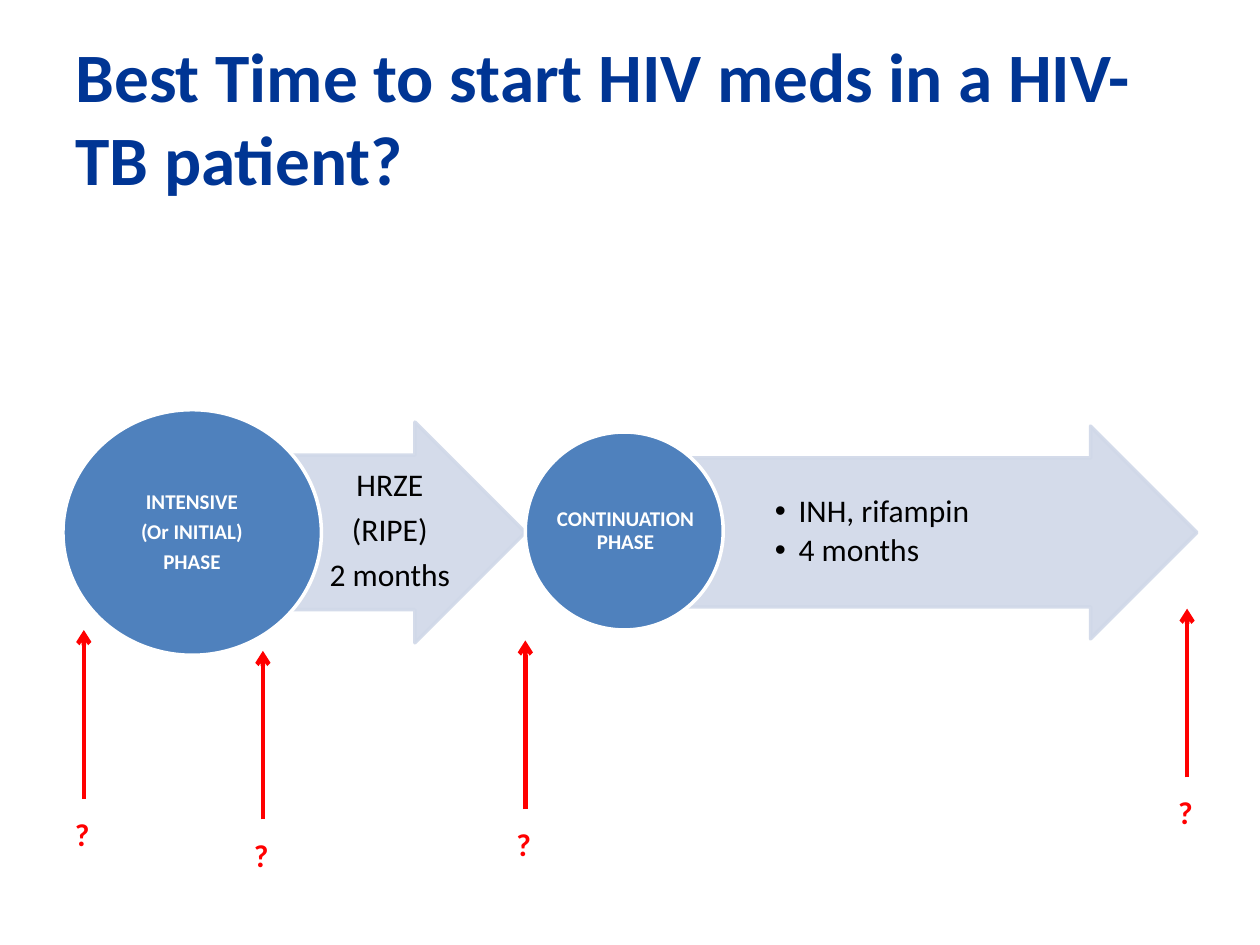
from lxml.etree import SubElement
from pptx import Presentation
from pptx.dml.color import RGBColor
from pptx.enum.shapes import MSO_CONNECTOR, MSO_SHAPE
from pptx.enum.text import MSO_ANCHOR, MSO_AUTO_SIZE, PP_ALIGN
from pptx.oxml.ns import qn
from pptx.util import Cm, Pt

NAVY = RGBColor(0x00, 0x35, 0x94)
BLUE = RGBColor(0x4F, 0x81, 0xBD)
PALE = RGBColor(0xD0, 0xD8, 0xE8)
RED = RGBColor(0xFF, 0x00, 0x00)
WHITE = RGBColor(0xFF, 0xFF, 0xFF)
BLACK = RGBColor(0x00, 0x00, 0x00)

ARROW_LENGTH = 3.4


def add_bullet(p):
    pPr = p._p.get_or_add_pPr()
    pPr.set("marL", str(Cm(0.48)))
    pPr.set("indent", str(-Cm(0.48)))
    SubElement(pPr, qn("a:buFont")).set("typeface", "Arial")
    SubElement(pPr, qn("a:buChar")).set("char", "•")


def add_text(s, text, box, size=18, color=BLACK, bold=False, align=PP_ALIGN.LEFT,
             anchor=MSO_ANCHOR.MIDDLE, margins=None, spacing=None, after=None,
             bullets=False, wrap=True):
    tb = s.shapes.add_textbox(*map(Cm, box))
    tf = tb.text_frame
    tf.word_wrap = wrap
    tf.auto_size = MSO_AUTO_SIZE.NONE if wrap else MSO_AUTO_SIZE.SHAPE_TO_FIT_TEXT
    tf.vertical_anchor = anchor
    if margins:
        (tf.margin_left, tf.margin_top,
         tf.margin_right, tf.margin_bottom) = map(Cm, margins)
    for i, line in enumerate(text.split("\n")):
        p = tf.add_paragraph() if i else tf.paragraphs[0]
        p.alignment = align
        if spacing:
            p.line_spacing = spacing
        if after:
            p.space_after = Pt(after)
        if bullets:
            add_bullet(p)
        r = p.add_run()
        r.text = line
        r.font.name = "Calibri"
        r.font.size = Pt(size)
        r.font.bold = bold
        r.font.color.rgb = color


def add_figure(s, kind, box, fill, line, opacity=100):
    sp = s.shapes.add_shape(kind, *map(Cm, box))
    sp.shadow.inherit = False
    sp.fill.solid()
    sp.fill.fore_color.rgb = fill
    sp.line.color.rgb = line
    sp.line.width = Pt(2)
    if opacity < 100:
        for clr in sp._element.spPr.iter(qn("a:srgbClr")):
            SubElement(clr, qn("a:alpha")).set("val", str(opacity * 1000))
    return sp


def add_phase(s, arrow, detail, detail_box, circle, name, name_box, **detail_format):
    sp = add_figure(s, MSO_SHAPE.RIGHT_ARROW, arrow, PALE, PALE, opacity=90)
    sp.adjustments[0] = 0.7
    sp.adjustments[1] = 0.5
    add_text(s, detail, detail_box, margins=(0.13, 0.03, 0.08, 0.03),
             spacing=0.9, **detail_format)
    add_figure(s, MSO_SHAPE.OVAL, circle, BLUE, WHITE)
    add_text(s, name, name_box, size=12, color=WHITE, bold=True,
             align=PP_ALIGN.CENTER, margins=(0.03,) * 4, spacing=0.9, after=4.2)


def add_question(s, x, tip):
    """Red arrow pointing up to the timeline, with a question mark below."""
    bottom = tip + ARROW_LENGTH
    c = s.shapes.add_connector(MSO_CONNECTOR.STRAIGHT, Cm(x), Cm(bottom), Cm(x), Cm(tip))
    c.line.color.rgb = RED
    c.line.width = Pt(2.5)
    SubElement(c.line._get_or_add_ln(), qn("a:tailEnd")).set("type", "arrow")
    SubElement(c._element.spPr, qn("a:effectLst"))
    add_text(s, "?", (x - 0.43, bottom + 0.2, 0.91, 1.02), color=RED, bold=True,
             anchor=MSO_ANCHOR.TOP, wrap=False)


def main():
    prs = Presentation()
    prs.slide_width, prs.slide_height = Cm(25.4), Cm(19.05)
    s = prs.slides.add_slide(prs.slide_layouts[6])

    # Title
    add_text(s, "Best Time to start HIV meds in a HIV-TB patient?",
             (1.27, 0.76, 22.86, 3.18), size=39.6, color=NAVY, bold=True)

    # Treatment phases
    add_phase(s, (5.13, 8.51, 5.46, 4.45),
              "HRZE\n(RIPE)\n2 months", (6.5, 9.17, 2.67, 3.1),
              (1.27, 8.26, 5.21, 4.95),
              "INTENSIVE\n(Or INITIAL)\nPHASE", (2.03, 8.99, 3.68, 3.51),
              align=PP_ALIGN.CENTER, after=6.3)
    add_phase(s, (12.62, 8.59, 11.51, 4.29),
              "INH, rifampin\n4 months", (15.49, 9.22, 7.14, 3),
              (10.59, 8.71, 3.99, 3.99),
              "CONTINUATION PHASE", (11.1, 9.3, 3.02, 2.82),
              bullets=True, after=2.7)

    # Possible starting times
    for x, tip in ((1.69, 12.7), (5.3, 13.12), (10.59, 12.91), (23.93, 12.27)):
        add_question(s, x, tip)

    prs.save("out.pptx")


if __name__ == "__main__":
    main()
